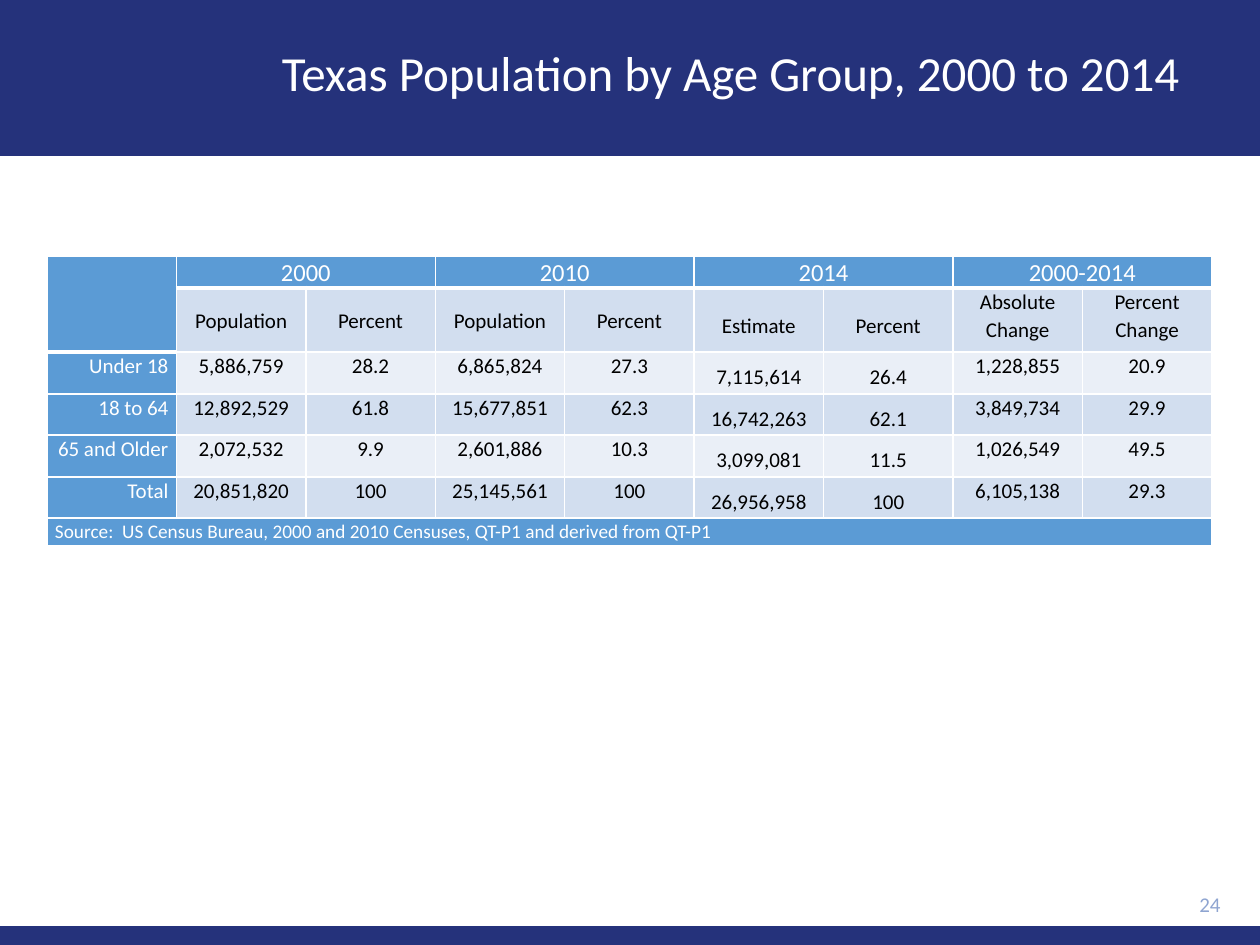
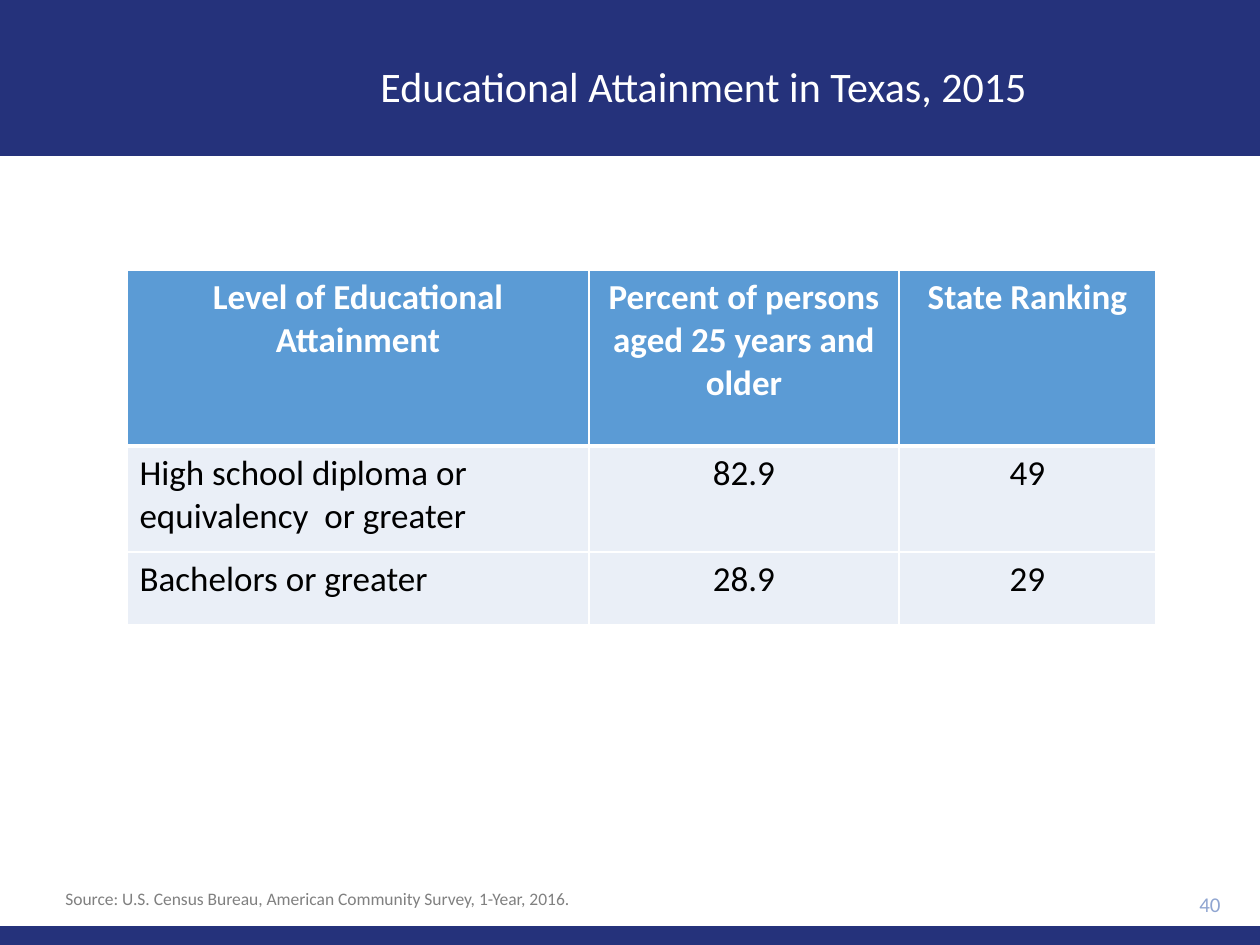
"""Build two slides of Texas population and education tables."""
from dataclasses import dataclass, replace
from typing import Optional

import lxml.etree
import pptx
import pptx.dml.color
import pptx.enum.shapes
import pptx.enum.text
import pptx.oxml.ns
import pptx.util

RGBColor = pptx.dml.color.RGBColor
NAVY = RGBColor(0x25, 0x32, 0x7B)
BLUE = RGBColor(0x5B, 0x9B, 0xD5)
LIGHT_BLUE = RGBColor(0xD2, 0xDE, 0xEF)
PALE_BLUE = RGBColor(0xEA, 0xEF, 0xF7)
PAGE_BLUE = RGBColor(0x8F, 0xA5, 0xD1)
GRAY = RGBColor(0x80, 0x80, 0x80)
WHITE = RGBColor(0xFF, 0xFF, 0xFF)
BLACK = RGBColor(0x00, 0x00, 0x00)

FONT = "Calibri"
PX_PER_INCH = 126
SLIDE_WIDTH, SLIDE_HEIGHT = 1260, 945
THIN, THICK = 1, 3
ALIGN = pptx.enum.text.PP_ALIGN
ANCHOR = pptx.enum.text.MSO_ANCHOR


@dataclass(frozen=True)
class Box:
    """Position and size in px."""
    left: int
    top: int
    width: int
    height: int

    def emu(self) -> tuple:
        """Return the four lengths in EMU."""
        return tuple(px(v) for v in (self.left, self.top, self.width, self.height))


@dataclass(frozen=True)
class TextStyle:
    """Look of one paragraph."""
    size: int
    color: RGBColor
    align: ALIGN = ALIGN.CENTER
    bold: bool = False
    line_spacing: Optional[float] = None
    space_after: int = 0


@dataclass(frozen=True)
class CellStyle:
    """Look of one table cell."""
    text: TextStyle
    fill: RGBColor
    anchor: ANCHOR = ANCHOR.TOP
    margins: Optional[tuple] = None
    top: int = THIN
    bottom: int = THIN


BANDS = (Box(0, 0, SLIDE_WIDTH, 156), Box(0, 926, SLIDE_WIDTH, 19))
PAGE_NUMBER = Box(1121, 883, 112, 43)

AGE_PERIODS = ("2000", "2010", "2014", "2000-2014")
AGE_MEASURES = ("", "Population", "Percent", "Population", "Percent",
                "Estimate", "Percent", "Absolute Change", "Percent Change")
AGE_ROWS = (
    ("Under 18", "5,886,759", "28.2", "6,865,824", "27.3",
     "7,115,614", "26.4", "1,228,855", "20.9"),
    ("18 to 64", "12,892,529", "61.8", "15,677,851", "62.3",
     "16,742,263", "62.1", "3,849,734", "29.9"),
    ("65 and Older", "2,072,532", "9.9", "2,601,886", "10.3",
     "3,099,081", "11.5", "1,026,549", "49.5"),
    ("Total", "20,851,820", "100", "25,145,561", "100",
     "26,956,958", "100", "6,105,138", "29.3"),
)
AGE_SOURCE = "Source:  US Census Bureau, 2000 and 2010 Censuses, QT-P1 and derived from QT-P1"
AGE_HEIGHTS = (32, 64, 42, 41, 42, 41, 28)

EDUCATION_ROWS = (
    ("Level of Educational Attainment", "Percent of persons aged 25 years and older",
     "State Ranking"),
    ("High school diploma or equivalency  or greater", "82.9", "49"),
    ("Bachelors or greater", "28.9", "29"),
)
EDUCATION_WIDTHS = (462, 310, 257)
EDUCATION_HEIGHTS = (176, 106, 73)
EDUCATION_SOURCE = "Source: U.S. Census Bureau, American Community Survey, 1-Year, 2016."


def px(length: int) -> int:
    """Turn px into EMU."""
    return round(length * pptx.util.Inches(1) / PX_PER_INCH)


def write(frame, text: str, style: TextStyle) -> None:
    """Put one styled paragraph into a text frame."""
    frame.text = text
    paragraph = frame.paragraphs[0]
    paragraph.alignment = style.align
    paragraph.space_before = pptx.util.Pt(0)
    paragraph.space_after = pptx.util.Pt(style.space_after)
    if style.line_spacing:
        paragraph.line_spacing = style.line_spacing
    font = paragraph.font
    font.name = FONT
    font.size = pptx.util.Pt(style.size)
    font.bold = style.bold
    font.color.rgb = style.color


def add_text(slide, box: Box, text: str, style: TextStyle, anchor=ANCHOR.TOP) -> None:
    """Add a wrapped text box."""
    frame = slide.shapes.add_textbox(*box.emu()).text_frame
    frame.word_wrap = True
    frame.vertical_anchor = anchor
    write(frame, text, style)


def add_bands(slide) -> None:
    """Draw the navy bands and hand them to the layout of the slide."""
    for index, box in enumerate(BANDS):
        band = slide.shapes.add_shape(
            pptx.enum.shapes.MSO_SHAPE.RECTANGLE, *box.emu())
        band.shadow.inherit = False
        band.fill.solid()
        band.fill.fore_color.rgb = NAVY
        band.line.fill.background()
        slide.slide_layout.shapes.element.insert(2 + index, band.element)


def add_slide(presentation, title: str, box: Box, size: int, number: int):
    """Add a slide with its title and page number."""
    slide = presentation.slides.add_slide(presentation.slide_layouts[5])
    shape = slide.shapes.title
    shape.left, shape.top, shape.width, shape.height = box.emu()
    shape.text_frame.vertical_anchor = ANCHOR.MIDDLE
    write(shape.text_frame, title, TextStyle(size, WHITE, line_spacing=0.9))
    add_text(slide, PAGE_NUMBER, str(number),
             TextStyle(12, PAGE_BLUE, ALIGN.RIGHT), ANCHOR.MIDDLE)
    return slide


def add_border(cell, side: str, points: int) -> None:
    """Add a white border line to one side of a cell."""
    qn = pptx.oxml.ns.qn
    properties = cell._tc.get_or_add_tcPr()
    line = lxml.etree.SubElement(properties, qn(f"a:{side}"), w=str(pptx.util.Pt(points)))
    fill = lxml.etree.SubElement(line, qn("a:solidFill"))
    lxml.etree.SubElement(fill, qn("a:srgbClr"), val=str(WHITE))


def fill_cell(cell, text: str, style: CellStyle) -> None:
    """Write a cell and set its borders, fill and margins."""
    widths = {"lnL": THIN, "lnR": THIN, "lnT": style.top, "lnB": style.bottom}
    for side, points in widths.items():
        add_border(cell, side, points)
    cell.fill.solid()
    cell.fill.fore_color.rgb = style.fill
    cell.vertical_anchor = style.anchor
    if style.margins:
        (cell.margin_left, cell.margin_top,
         cell.margin_right, cell.margin_bottom) = (px(v) for v in style.margins)
    write(cell.text_frame, text, style.text)


def add_table(slide, box: Box, columns: int, heights: tuple):
    """Add a plain table with the given row heights."""
    table = slide.shapes.add_table(len(heights), columns, *box.emu()).table
    table.first_row = table.horz_banding = False
    for row, height in zip(table.rows, heights):
        row.height = px(height)
    return table


def add_age_table(slide) -> None:
    """Add the table of population by age group."""
    columns = len(AGE_MEASURES)
    table = add_table(slide, Box(47, 256, 1165, sum(AGE_HEIGHTS)), columns, AGE_HEIGHTS)
    last = len(AGE_HEIGHTS) - 1
    table.cell(0, 0).merge(table.cell(1, 0))
    table.cell(last, 0).merge(table.cell(last, columns - 1))

    base = CellStyle(TextStyle(12, BLACK, line_spacing=1.07), BLUE, margins=(8, 0, 8, 0))
    period = replace(base, text=replace(base.text, size=14, color=WHITE), bottom=THICK)
    label = replace(base, text=replace(base.text, color=WHITE, align=ALIGN.RIGHT))
    source = replace(base, text=replace(base.text, size=11, color=WHITE, align=ALIGN.LEFT))

    for row in (0, 1):
        fill_cell(table.cell(row, 0), "", period)
    for index, text in enumerate(AGE_PERIODS):
        column = 1 + 2 * index
        table.cell(0, column).merge(table.cell(0, column + 1))
        for part, content in enumerate((text, "")):
            fill_cell(table.cell(0, column + part), content, period)

    for row, values in enumerate((AGE_MEASURES,) + AGE_ROWS, start=1):
        heading = row == 1
        fill = PALE_BLUE if row % 2 == 0 else LIGHT_BLUE
        for column, value in enumerate(values):
            if column == 0:
                if not heading:
                    fill_cell(table.cell(row, 0), value,
                              replace(label, top=THICK if row == 2 else THIN))
                continue
            is_estimate, is_change = column in (5, 6), column > 6
            text = replace(base.text, line_spacing=1.5 if is_estimate else 1.07,
                           space_after=8 if is_change and not heading else 0)
            anchor = ANCHOR.MIDDLE if heading and not is_change else ANCHOR.TOP
            fill_cell(table.cell(row, column), value,
                      replace(base, text=text, fill=fill, anchor=anchor,
                              top=THICK if heading else THIN))
    fill_cell(table.cell(last, 0), AGE_SOURCE, source)


def add_education_table(slide) -> None:
    """Add the table of educational attainment."""
    box = Box(127, 270, sum(EDUCATION_WIDTHS), sum(EDUCATION_HEIGHTS))
    table = add_table(slide, box, len(EDUCATION_WIDTHS), EDUCATION_HEIGHTS)
    for column, width in zip(table.columns, EDUCATION_WIDTHS):
        column.width = px(width)
    heading = CellStyle(TextStyle(20, WHITE, bold=True), BLUE, bottom=THICK)
    for row, values in enumerate(EDUCATION_ROWS):
        for column, value in enumerate(values):
            align = ALIGN.LEFT if column == 0 else ALIGN.CENTER
            body = CellStyle(TextStyle(20, BLACK, align), PALE_BLUE,
                             top=THICK if row == 1 else THIN)
            fill_cell(table.cell(row, column), value, heading if row == 0 else body)


def main() -> None:
    """Build and save the presentation."""
    presentation = pptx.Presentation()
    presentation.slide_width = px(SLIDE_WIDTH)
    presentation.slide_height = px(SLIDE_HEIGHT)

    age_slide = add_slide(presentation, "Texas Population by Age Group, 2000 to 2014",
                          Box(214, 13, 1033, 126), 28, 24)
    add_bands(age_slide)
    add_age_table(age_slide)

    education_slide = add_slide(presentation, "Educational Attainment in Texas, 2015",
                                Box(231, 21, 945, 136), 24, 40)
    add_education_table(education_slide)
    add_text(education_slide, Box(53, 882, 714, 34), EDUCATION_SOURCE,
             TextStyle(10, GRAY, ALIGN.LEFT))
    presentation.save("out.pptx")


if __name__ == "__main__":
    main()
